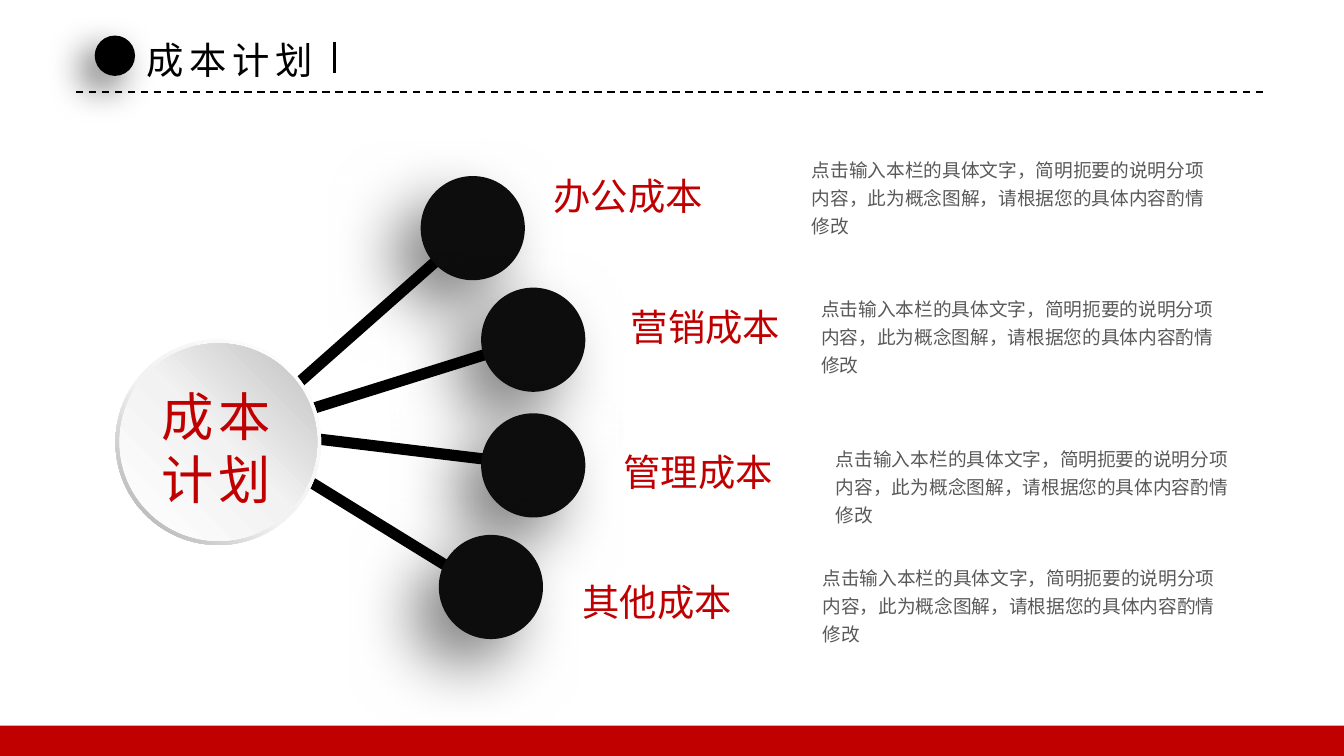
from lxml import etree
from pptx import Presentation
from pptx.dml.color import RGBColor
from pptx.enum.dml import MSO_LINE
from pptx.enum.shapes import MSO_CONNECTOR, MSO_SHAPE
from pptx.enum.text import MSO_ANCHOR, MSO_AUTO_SIZE, PP_ALIGN
from pptx.oxml import parse_xml
from pptx.oxml.ns import nsdecls, qn
from pptx.util import Emu, Pt

PX = 4572  # 200 px to the inch
STRAIGHT = MSO_CONNECTOR.STRAIGHT
OVAL, DONUT, RECT = MSO_SHAPE.OVAL, MSO_SHAPE.DONUT, MSO_SHAPE.RECTANGLE
LEFT, JUSTIFY = PP_ALIGN.LEFT, PP_ALIGN.JUSTIFY
TOP = MSO_ANCHOR.TOP
GROW = MSO_AUTO_SIZE.SHAPE_TO_FIT_TEXT
DASH = MSO_LINE.DASH

THEME = {
    "font": "Noto Sans CJK SC",
    "black": "000000", "node": "0D0D0D", "red": "C00000", "grey": "595959",
    "ring": [(0, "FFFFFF"), (55, "F2F2F2"), (100, "A6A6A6")],
    "disc": [(0, "FFFFFF"), (51, "F2F2F2"), (100, "BFBFBF")],
    "hub_size": 28, "heading_size": 20, "body_size": 10,
}
BODY = "点击输入本栏的具体文字，简明扼要的说明分项内容，此为概念图解，请根据您的具体内容酌情修改"
NODE_SIZE = 155
# heading, node corner, heading corner, body corner, ray start and end
COSTS = [
    ("办公成本", (626, 262), (804, 248), (1208, 228), (374, 632, 704, 340)),
    ("营销成本", (716, 428), (919, 443), (1222, 435), (356, 642, 772, 512)),
    ("管理成本", (716, 615), (908, 659), (1244, 658), (296, 632, 794, 692)),
    ("其他成本", (653, 796), (847, 852), (1224, 836), (296, 615, 752, 896)),
]


def style_text(box, lines, size, color, spacing=0, align=LEFT):
    """Fill a text box; spacing is the tracking between letters in points."""
    frame = box.text_frame
    frame.text = "\n".join(lines)
    frame.auto_size = GROW
    frame.word_wrap = align == JUSTIFY
    frame.vertical_anchor = TOP
    for paragraph in frame.paragraphs:
        paragraph.alignment = align
        font = paragraph.font
        font.size = Pt(size)
        font.color.rgb = RGBColor.from_string(color)
        font.name = THEME["font"]
        props = paragraph._p.pPr.find(qn("a:defRPr"))
        etree.SubElement(props, qn("a:ea")).set("typeface", THEME["font"])
        if spacing:
            props.set("spc", str(spacing * 100))


def add_figure(kind, box, fill, angle=0, shadow=None):
    """Fill is a colour or a list of gradient stops; shadow is opacity, blur, distance."""
    figure = slide.shapes.add_shape(kind, *(Emu(v * PX) for v in box))
    figure.shadow.inherit = False
    figure.line.fill.background()
    if isinstance(fill, str):
        figure.fill.solid()
        figure.fill.fore_color.rgb = RGBColor.from_string(fill)
    else:
        stops = "".join(f'<a:gs pos="{pos * 1000}"><a:srgbClr val="{color}"/></a:gs>'
                        for pos, color in fill)
        figure._element.spPr.find(qn("a:prstGeom")).addnext(parse_xml(
            f'<a:gradFill {nsdecls("a")} rotWithShape="1"><a:gsLst>{stops}</a:gsLst>'
            f'<a:lin ang="{angle * 60000}" scaled="0"/></a:gradFill>'))
    if shadow:
        opacity, blur, distance = shadow
        figure._element.spPr.find(qn("a:effectLst")).append(parse_xml(
            f'<a:outerShdw {nsdecls("a")} blurRad="{Pt(blur)}" dist="{Pt(distance)}" '
            f'dir="8100000" algn="tr" rotWithShape="0"><a:srgbClr val="{THEME["black"]}">'
            f'<a:alpha val="{opacity * 1000}"/></a:srgbClr></a:outerShdw>'))
    return figure


deck = Presentation()
deck.slide_width, deck.slide_height = Emu(2000 * PX), Emu(1125 * PX)
slide = deck.slides.add_slide(deck.slide_layouts[5])

# Rays from the hub, the dashed rule and the bar after the title
strokes = [(ray, 6, None) for *_, ray in COSTS]
strokes += [((113, 137, 1887, 137), 1, DASH), ((498, 62, 498, 108), 1.5, None)]
for ends, width, dash in strokes:
    stroke = slide.shapes.add_connector(STRAIGHT, *(Emu(v * PX) for v in ends))
    stroke.line.color.rgb = RGBColor.from_string(THEME["black"])
    stroke.line.width = Pt(width)
    if dash:
        stroke.line.dash_style = dash
    etree.SubElement(stroke._element.spPr, qn("a:effectLst"))

# Hub
ring = add_figure(DONUT, (172, 505, 306, 306), THEME["ring"], angle=135)
ring.adjustments[0] = 0.05
add_figure(OVAL, (178, 511, 294, 294), THEME["disc"], angle=315)
hub_label = slide.shapes.add_textbox(*(Emu(v * PX) for v in (220, 562, 214, 208)))
style_text(hub_label, ["成本", "计划"], THEME["hub_size"], THEME["red"], spacing=3)

# Cost items
for heading, node_at, heading_at, body_at, _ in COSTS:
    add_figure(OVAL, (*node_at, NODE_SIZE, NODE_SIZE), THEME["node"], shadow=(50, 35, 20))
    label = slide.shapes.add_textbox(*(Emu(v * PX) for v in (*heading_at, 264, 88)))
    style_text(label, [heading], THEME["heading_size"], THEME["red"])
    body = slide.shapes.add_textbox(*(Emu(v * PX) for v in (*body_at, 583, 126)))
    style_text(body, [BODY], THEME["body_size"], THEME["grey"], align=JUSTIFY)
    frame = body.text_frame
    frame.margin_left = frame.margin_right = frame.margin_top = frame.margin_bottom = 0
    frame.paragraphs[0].line_spacing = Pt(15)

# Header and footer
add_figure(OVAL, (141, 53, 60, 60), THEME["black"], shadow=(60, 20, 10))
title = slide.shapes.title
title.left, title.top, title.width, title.height = (Emu(v * PX) for v in (198, 46, 298, 88))
style_text(title, ["成本计划"], THEME["heading_size"], THEME["black"], spacing=3)
add_figure(RECT, (0, 1080, 2000, 48), THEME["red"])

deck.save("out.pptx")
